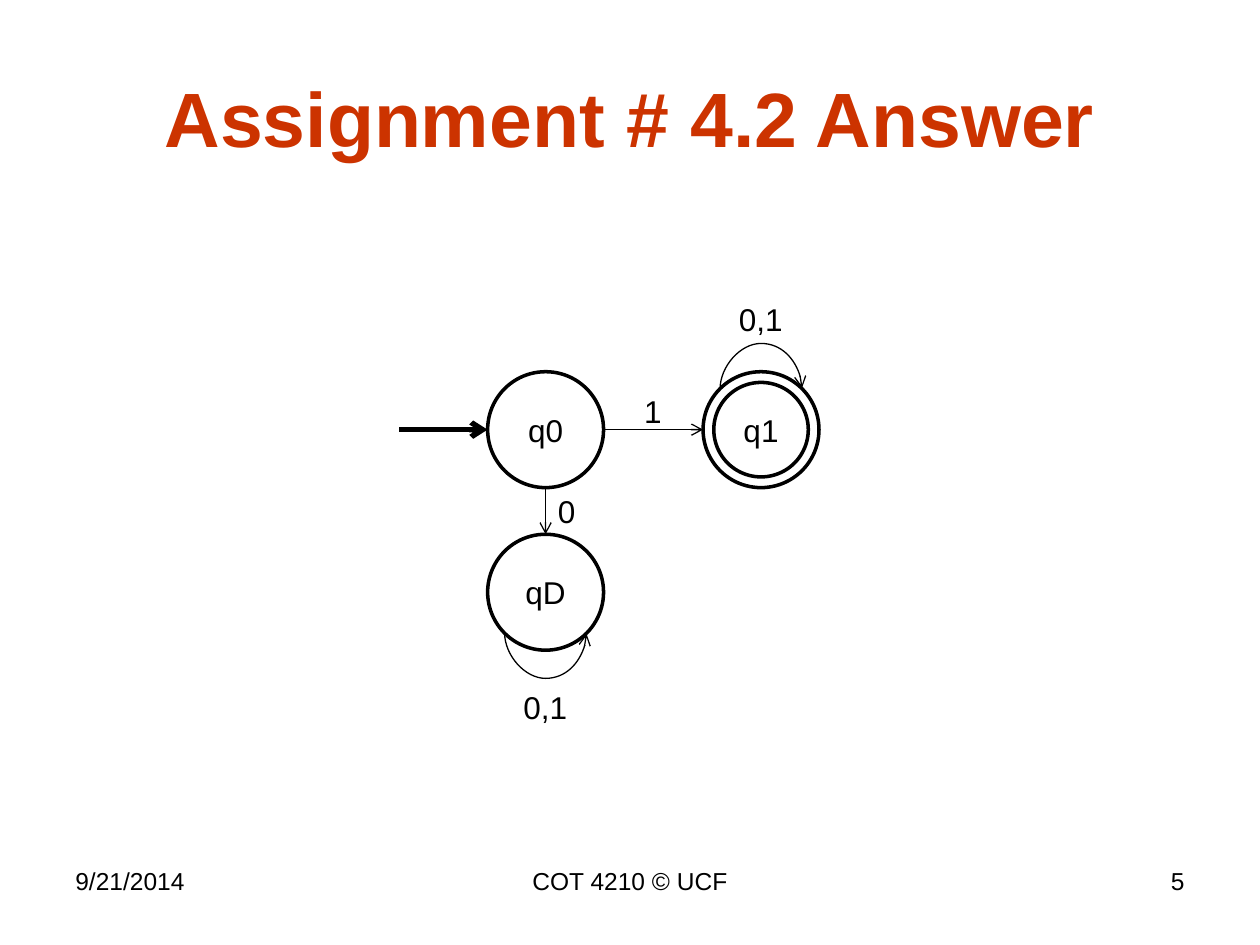
from dataclasses import dataclass
from math import sqrt

from lxml.etree import SubElement
from pptx import Presentation
from pptx.dml.color import RGBColor
from pptx.enum.shapes import MSO_CONNECTOR, MSO_SHAPE
from pptx.enum.text import MSO_ANCHOR, PP_ALIGN
from pptx.oxml.ns import qn
from pptx.util import Inches, Pt


@dataclass(frozen=True)
class Theme:
    font: str = "Arial"
    ink: RGBColor = RGBColor(0, 0, 0)
    paper: RGBColor = RGBColor(255, 255, 255)
    accent: RGBColor = RGBColor(0xCC, 0x33, 0x00)
    title: int = 44
    body: int = 18
    footer: int = 14
    thin: float = 0.75
    ring: float = 2
    heavy: float = 3


T = Theme()
W, H = 10, 7.5
MARGIN = 0.05 * W
STATE, INNER = 0.92, 0.75            # state diameters
COLS, ROWS = (4.33, 6.04), (3.41, 4.7)  # state centres
LABEL_H = 0.4
LOOP_RISE, LOOP_SKEW = 0.37, 0.01
# Connection sites of an ellipse, counted anticlockwise from the top
TOP, TOP_LEFT, LEFT, LOW_LEFT, BOTTOM, LOW_RIGHT, RIGHT, TOP_RIGHT = range(8)


def write(sp, text, size, align, color=T.ink, bold=False, anchor=MSO_ANCHOR.TOP):
    tf = sp.text_frame
    tf.vertical_anchor = anchor
    p = tf.paragraphs[0]
    p.text, p.alignment = text, align
    p.font.name, p.font.size, p.font.bold = T.font, Pt(size), bold
    p.font.color.rgb = color


def add_text(s, text, box, size, align=PP_ALIGN.LEFT, wrap=True, **look):
    sp = s.shapes.add_textbox(*map(Inches, box))
    sp.text_frame.word_wrap = wrap
    write(sp, text, size, align, **look)


def add_label(s, text, cx, cy):
    """Transition label centred on a point."""
    width = 0.34 if len(text) == 1 else 0.55
    add_text(s, text, (cx - width / 2, cy - LABEL_H / 2, width, LABEL_H),
             T.body, wrap=False)


def add_circle(s, cx, cy, size, filled=True):
    sp = s.shapes.add_shape(MSO_SHAPE.OVAL, Inches(cx - size / 2),
                            Inches(cy - size / 2), Inches(size), Inches(size))
    sp.shadow.inherit = False
    if filled:
        sp.fill.solid()
        sp.fill.fore_color.rgb = T.paper
    else:
        sp.fill.background()
    sp.line.color.rgb, sp.line.width = T.ink, Pt(T.ring)
    return sp


def add_state(s, name, cx, cy, accepting=False):
    sp = add_circle(s, cx, cy, STATE)
    sp.text_frame.word_wrap = False
    write(sp, name, T.body, PP_ALIGN.CENTER, anchor=MSO_ANCHOR.MIDDLE)
    if accepting:
        add_circle(s, cx, cy, INNER, filled=False)
    return sp


def add_arrow(s, kind, start, end, width=T.thin, source=None, target=None):
    """Connector with an open head; source and target are (state, site)."""
    c = s.shapes.add_connector(kind, *map(Inches, (*start, *end)))
    c.line.color.rgb, c.line.width = T.ink, Pt(width)
    SubElement(c.line._get_or_add_ln(), qn("a:tailEnd"), type="arrow")
    SubElement(c._element.spPr, qn("a:effectLst"))
    links = c._element.find(".//" + qn("p:cNvCxnSpPr"))
    # Ellipses have eight sites; begin_connect only knows the four of a rectangle
    for tag, joint in (("a:stCxn", source), ("a:endCxn", target)):
        if joint:
            SubElement(links, qn(tag), id=str(joint[0].shape_id), idx=str(joint[1]))
    return c


def add_loop(s, state, cx, cy, above):
    """Self-transition between the two diagonal sites of one side."""
    reach = STATE / 2 / sqrt(2)
    cy += -reach if above else reach
    sites = (TOP_LEFT, TOP_RIGHT) if above else (LOW_LEFT, LOW_RIGHT)
    c = add_arrow(s, MSO_CONNECTOR.CURVE,
                  (cx - LOOP_SKEW / 2, cy - reach), (cx + LOOP_SKEW / 2, cy + reach),
                  source=(state, sites[0]), target=(state, sites[1]))
    xfrm = c._element.spPr.find(qn("a:xfrm"))
    xfrm.set("rot", str((90 if above else 270) * 60000))
    xfrm.set("flipH", "1")
    if above:
        xfrm.set("flipV", "1")
    guides = c._element.spPr.find(".//" + qn("a:avLst"))
    bulge = round(LOOP_RISE / LOOP_SKEW * 100000)
    SubElement(guides, qn("a:gd"), name="adj1", fmla=f"val {bulge}")


def add_automaton(s):
    (x0, x1), (y0, y1) = COLS, ROWS
    r = STATE / 2
    q0 = add_state(s, "q0", x0, y0)
    q1 = add_state(s, "q1", x1, y0, accepting=True)
    qd = add_state(s, "qD", x0, y1)

    line = MSO_CONNECTOR.STRAIGHT
    add_arrow(s, line, (x0 - r - 0.7, y0), (x0 - r, y0), T.heavy, target=(q0, LEFT))
    add_arrow(s, line, (x0 + r, y0), (x1 - r, y0), source=(q0, RIGHT), target=(q1, LEFT))
    add_arrow(s, line, (x0, y0 + r), (x0, y1 - r), source=(q0, BOTTOM), target=(qd, TOP))
    add_loop(s, q1, x1, y0, above=True)
    add_loop(s, qd, x0, y1, above=False)

    add_label(s, "1", (x0 + x1) / 2, y0 - 0.15)
    add_label(s, "0", x0 + 0.17, (y0 + y1) / 2)
    add_label(s, "0,1", x1, y0 - 0.88)
    add_label(s, "0,1", x0, y1 + 0.91)


def add_footer(s, date, course, number):
    side, middle = 2.33, 3.17
    for text, left, width, align in (
            (date, MARGIN, side, PP_ALIGN.LEFT),
            (course, (W - middle) / 2, middle, PP_ALIGN.CENTER),
            (number, W - MARGIN - side, side, PP_ALIGN.RIGHT)):
        add_text(s, text, (left, 0.91 * H, width, 0.52), T.footer, align)


def main():
    prs = Presentation()
    prs.slide_width, prs.slide_height = Inches(W), Inches(H)
    s = prs.slides.add_slide(prs.slide_layouts[6])
    add_text(s, "Assignment # 4.2 Answer", (MARGIN, 0.04 * H, W - 2 * MARGIN, 1.25),
             T.title, PP_ALIGN.CENTER, color=T.accent, bold=True,
             anchor=MSO_ANCHOR.MIDDLE)
    add_automaton(s)
    add_footer(s, "9/21/2014", "COT 4210 © UCF", "5")
    prs.save("out.pptx")


if __name__ == "__main__":
    main()
